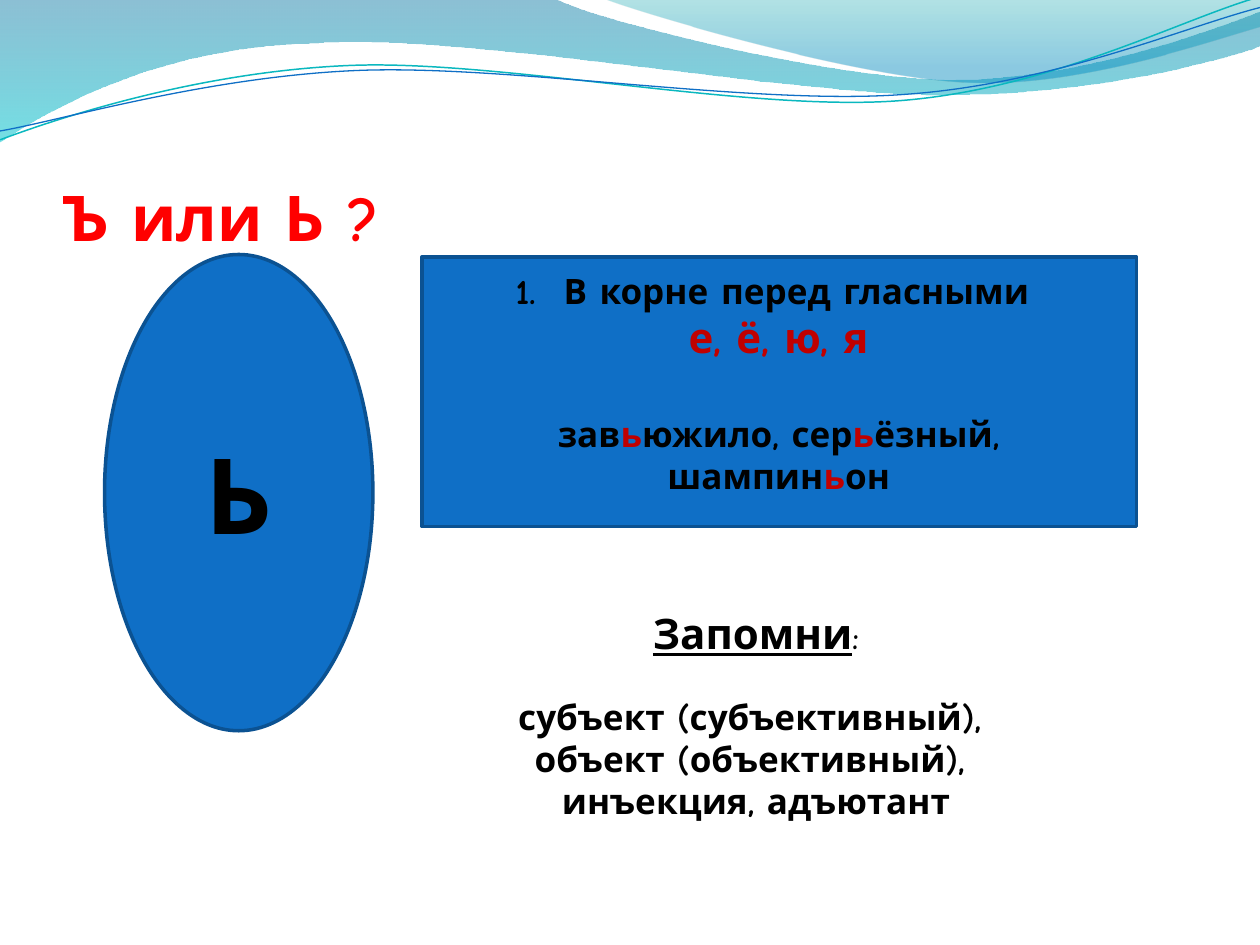
import math
from dataclasses import dataclass

from lxml import etree
from pptx import Presentation
from pptx import util as u
from pptx.dml import color
from pptx.enum import shapes, text
from pptx.oxml import ns


@dataclass(frozen=True)
class Theme:
    """Colours, font and type sizes of the slide."""
    font: str = "Comic Neue"
    blue: str = "0F6FC6"
    edge: str = "0B5292"
    teal: str = "0AB8BF"
    black: str = "000000"
    red: str = "FF0000"
    accent: str = "C00000"
    letter: int = 60
    title: int = 36
    heading: int = 24
    body: int = 20
    small: int = 18


THEME = Theme()
CURVE_TILT = -2.7

WIDE_WAVE = [(0, 0), (4.4, -0.01), (4.76, 0.17, 6.64, 0.63, 7.58, 0.63),
             (8.53, 0.63, 9.58, 0.26, 10, 0.09), (10.01, 0.36),
             (9.83, 0.44, 8.7, 0.76, 7.46, 0.75), (6.22, 0.75, 3.82, 0.28, 2.57, 0.34),
             (1.29, 0.36, 0.46, 0.83, -0.01, 1.13), (0, 0)]
RIGHT_WAVE = [(4.79, -0.01), (5.09, 0.11, 6.82, 0.62, 7.69, 0.65),
              (8.56, 0.69, 9.61, 0.32, 10, 0.21), (10, 0), (4.79, -0.01)]
TEAL_CURVE = [(0, 1.11), (0.48, 0.93, 1.58, 0.57, 2.77, 0.52),
              (3.95, 0.47, 5.93, 0.89, 7.13, 0.8), (8.33, 0.71, 9.38, 0.15, 9.98, -0.02)]
BLUE_CURVE = [(0, 1.04), (0.47, 0.96, 1.64, 0.61, 2.83, 0.56),
              (4.03, 0.51, 5.97, 0.84, 7.17, 0.75), (8.36, 0.67, 9.41, 0.21, 10, 0.06)]


def rgb(value):
    """Return a colour object for a hexadecimal value."""
    return color.RGBColor.from_string(value)


def pairs(segment):
    """Split a flat segment into its points."""
    return list(zip(segment[::2], segment[1::2]))


def turn(segments, degrees, center):
    """Rotate every point of the segments clockwise about a centre."""
    sine, cosine = math.sin(math.radians(degrees)), math.cos(math.radians(degrees))
    center_x, center_y = center
    turned = []
    for segment in segments:
        flat = []
        for x, y in pairs(segment):
            across, down = x - center_x, y - center_y
            flat += [center_x + across * cosine - down * sine,
                     center_y + across * sine + down * cosine]
        turned.append(tuple(flat))
    return turned


def add_outline(slide, segments, close):
    """Add a freeform whose six-number segments are cubic curves."""
    ends = [tuple(map(u.Inches, segment[-2:])) for segment in segments]
    builder = slide.shapes.build_freeform(*ends[0])
    builder.add_line_segments(ends[1:], close=close)
    shape = builder.convert_to_shape()
    shape.shadow.inherit = False
    lines = list(shape.element.spPr.iter(ns.qn("a:lnTo")))
    for line, segment in zip(lines, segments[1:]):
        if len(segment) == 6:
            curve = etree.Element(ns.qn("a:cubicBezTo"))
            for x, y in pairs(segment):
                etree.SubElement(curve, ns.qn("a:pt"), x=str(u.Inches(x) - shape.left),
                                 y=str(u.Inches(y) - shape.top))
            line.getparent().replace(line, curve)
    return shape


def add_wave(slide, segments, stops):
    """Add a closed wave with a translucent vertical gradient."""
    shape = add_outline(slide, segments, True)
    shape.line.fill.background()
    shape.fill.gradient()
    shape.fill.gradient_angle = 270
    for stop, (position, value, _) in zip(shape.fill.gradient_stops, stops):
        stop.position = position
        stop.color.rgb = rgb(value)
    gradient_colors = shape.element.spPr.iter(ns.qn("a:srgbClr"))
    for element, (_, _, opacity) in zip(gradient_colors, stops):
        etree.SubElement(element, ns.qn("a:alpha"), val=str(opacity * 1000))


def add_curve(slide, segments, center, value, width):
    """Add an open curved line in a tilted frame."""
    shape = add_outline(slide, turn(segments, -CURVE_TILT, center), False)
    shape.rotation = CURVE_TILT
    shape.fill.background()
    shape.line.color.rgb = rgb(value)
    shape.line.width = u.Pt(width)


def add_blue_shape(slide, kind, left, top, width, height):
    """Add a blue preset shape with a dark edge."""
    shape = slide.shapes.add_shape(kind, *map(u.Inches, (left, top, width, height)))
    shape.shadow.inherit = False
    shape.fill.solid()
    shape.fill.fore_color.rgb = rgb(THEME.blue)
    shape.line.color.rgb = rgb(THEME.edge)
    shape.line.width = u.Pt(2)
    return shape


def write(paragraph, words, size=THEME.body, value=THEME.black, underline=None,
          align=text.PP_ALIGN.CENTER):
    """Append a bold run to a paragraph."""
    paragraph.alignment = align
    run = paragraph.add_run()
    run.text = words
    run.font.name = THEME.font
    run.font.size = u.Pt(size)
    run.font.bold = True
    run.font.underline = underline
    run.font.color.rgb = rgb(value)


def add_text_box(slide, left, top, width, height, count):
    """Add a wrapping text box and return its paragraphs."""
    frame = slide.shapes.add_textbox(*map(u.Inches, (left, top, width, height))).text_frame
    frame.word_wrap = True
    frame.auto_size = text.MSO_AUTO_SIZE.SHAPE_TO_FIT_TEXT
    for _ in range(count - 1):
        frame.add_paragraph()
    return frame.paragraphs


def number(paragraph, indent):
    """Give a paragraph an automatic number with a hanging indent."""
    properties = paragraph._p.get_or_add_pPr()
    properties.set("marL", str(u.Inches(indent)))
    properties.set("indent", str(u.Inches(-indent)))
    etree.SubElement(properties, ns.qn("a:buFont"), typeface="+mj-lt")
    etree.SubElement(properties, ns.qn("a:buAutoNum"), type="arabicPeriod")


def add_title(slide, words):
    """Place and fill the title placeholder."""
    title = slide.shapes.title
    title.left, title.top, title.width, title.height = map(u.Inches, (0.5, 0.77, 9.08, 1.25))
    frame = title.text_frame
    frame.vertical_anchor = text.MSO_ANCHOR.BOTTOM
    frame.margin_left = frame.margin_right = frame.margin_bottom = 0
    frame.margin_top = u.Inches(0.05)
    write(frame.paragraphs[0], words, size=THEME.title, value=THEME.red, align=text.PP_ALIGN.LEFT)


def add_rule(slide):
    """Add the numbered spelling rule and its examples."""
    rule, vowels, examples = add_text_box(slide, 3.62, 2.09, 5.12, 2.22, 3)
    number(rule, 0.38)
    write(rule, "В корне перед гласными ")
    write(vowels, "е, ё, ю, я", size=THEME.heading, value=THEME.accent)
    examples.space_before = u.Pt(29)
    for index, part in enumerate("зав|ь|южило, сер|ь|ёзный, шампин|ь|он".split("|")):
        write(examples, part, value=THEME.accent if index % 2 else THEME.black)


def add_reminder(slide):
    """Add the words to remember."""
    heading, *lines = add_text_box(slide, 3.62, 4.77, 4.76, 1.82, 4)
    write(heading, "Запомни", size=THEME.heading, underline=True)
    write(heading, ":", size=THEME.small)
    lines[0].space_before = u.Pt(21.8)
    words = ("субъект (субъективный), ", "объект (объективный), ", "инъекция, адъютант")
    for paragraph, line in zip(lines, words):
        write(paragraph, line)


def main():
    """Build and save the slide."""
    presentation = Presentation()
    presentation.slide_width, presentation.slide_height = u.Inches(10), u.Inches(7.5)
    slide = presentation.slides.add_slide(presentation.slide_layouts[5])
    add_wave(slide, WIDE_WAVE, ((0, "0074A1", 45), (1, "00C6CF", 55)))
    add_wave(slide, RIGHT_WAVE, ((0, "00A1A9", 30), (0.8, "008BBF", 45)))
    add_curve(slide, TEAL_CURVE, (4.99, 0.58), THEME.teal, 0.85)
    add_curve(slide, BLUE_CURVE, (5, 0.59), THEME.blue, 0.75)
    add_title(slide, "Ъ или Ь ?")
    oval = add_blue_shape(slide, shapes.MSO_SHAPE.OVAL, 0.83, 2.02, 2.13, 3.78)
    oval.text_frame.vertical_anchor = text.MSO_ANCHOR.MIDDLE
    write(oval.text_frame.paragraphs[0], "Ь", size=THEME.letter)
    add_blue_shape(slide, shapes.MSO_SHAPE.RECTANGLE, 3.35, 2.04, 5.67, 2.14)
    add_rule(slide)
    add_reminder(slide)
    presentation.save("out.pptx")


if __name__ == "__main__":
    main()
